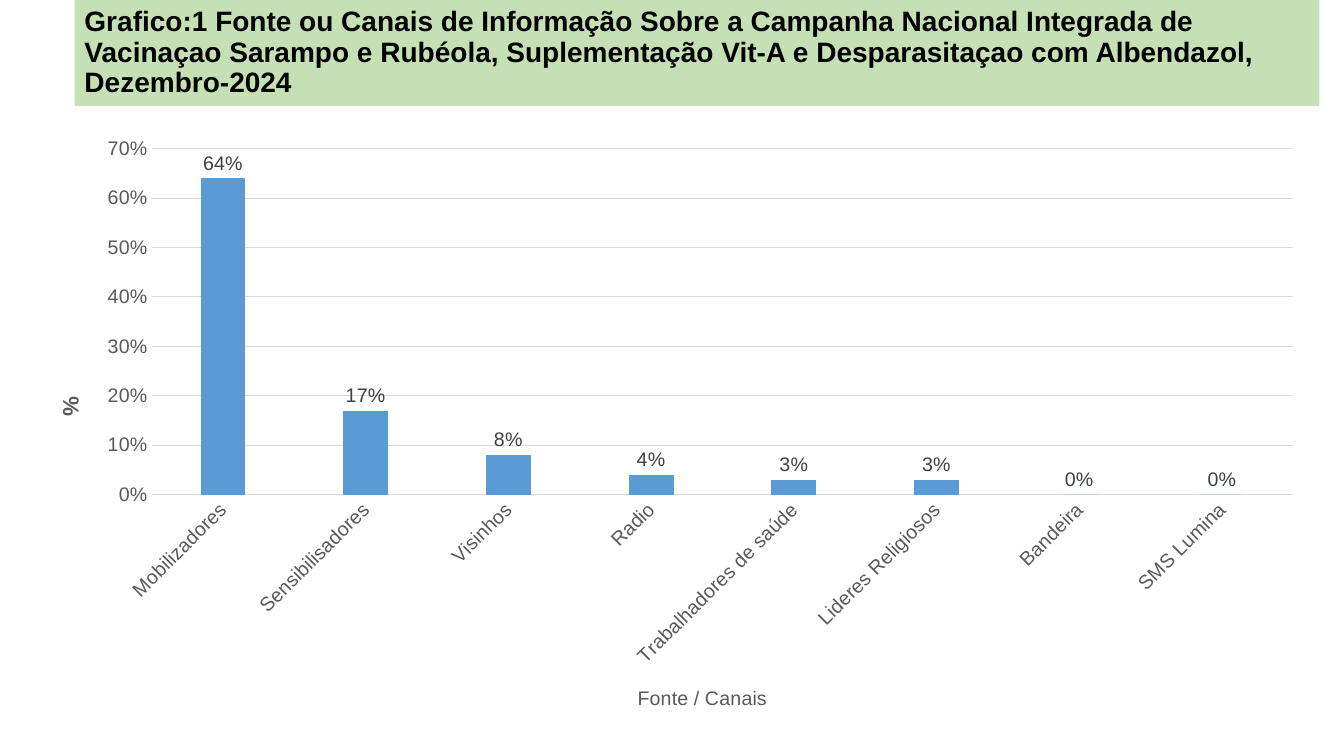
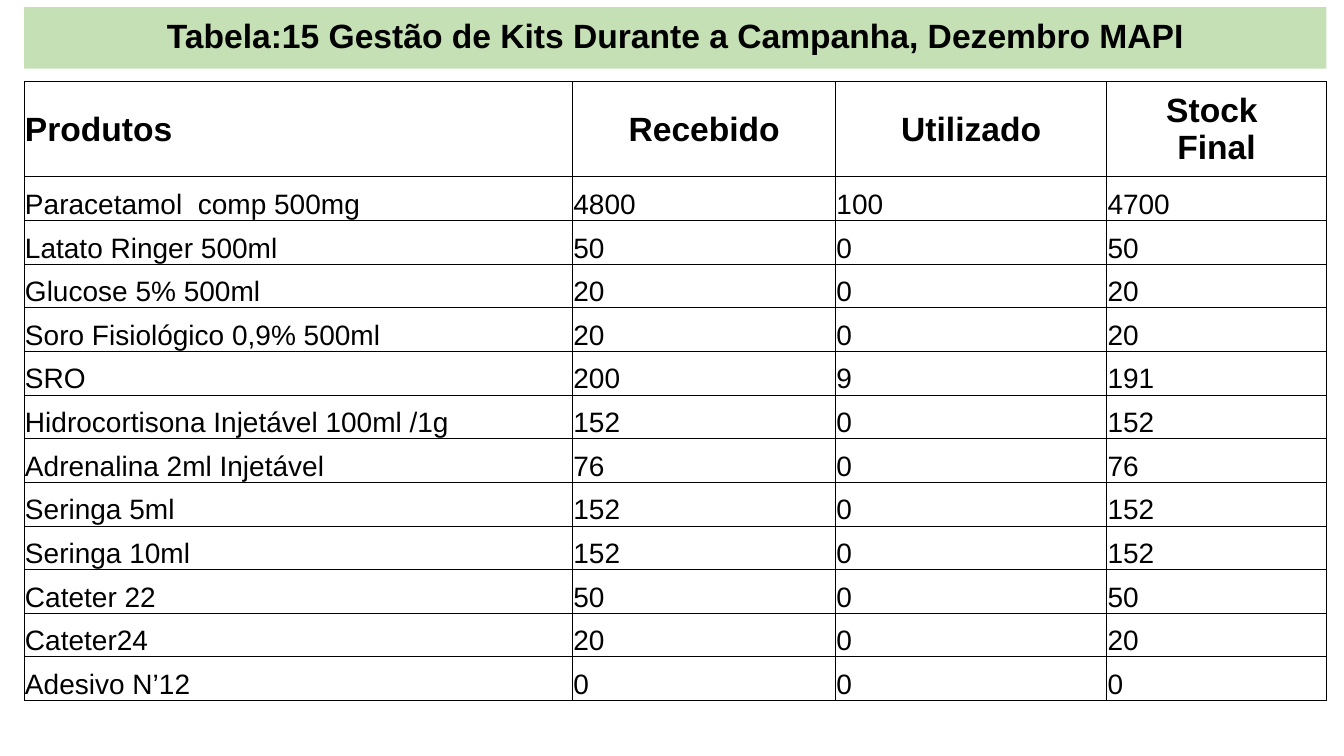
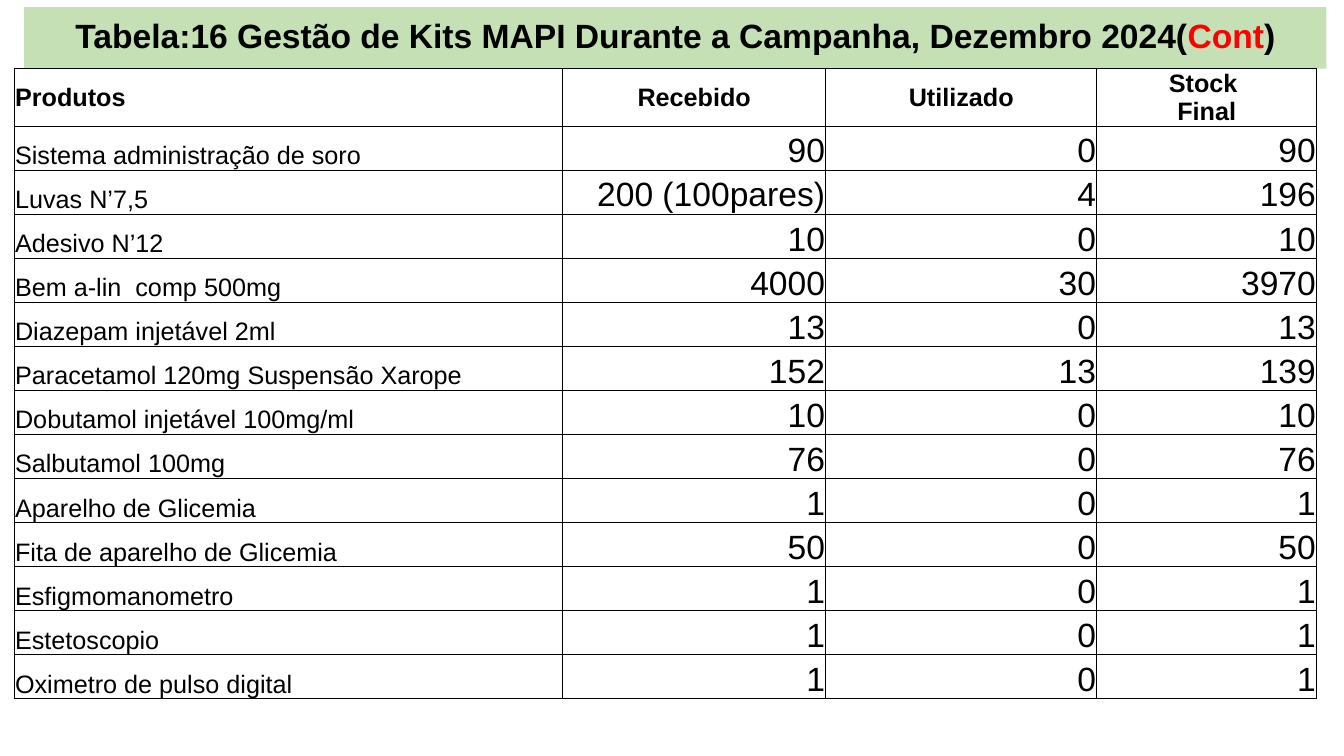
from lxml.etree import SubElement
from pptx import Presentation
from pptx.chart.data import CategoryChartData
from pptx.dml.color import RGBColor
from pptx.enum.chart import XL_CHART_TYPE, XL_LABEL_POSITION, XL_TICK_MARK
from pptx.enum.shapes import MSO_SHAPE
from pptx.enum.text import MSO_ANCHOR, PP_ALIGN
from pptx.oxml import parse_xml
from pptx.oxml.ns import nsdecls, qn
from pptx.util import Cm, Pt

COLORS = {
    "band": "C5E0B4", "text": "000000", "accent": "FF0000", "page": "FFFFFF",
    "bar": "5B9BD5", "grid": "D9D9D9", "axis": "595959", "label": "404040",
}
FONT = "Arial"
WIDE_BAND = (0.61, 0.18, 32.82, 1.55)
COLUMN_WIDTHS = (13.82, 6.63, 6.83, 5.54)
HEADERS = ("Produtos", "Recebido", "Utilizado", "Stock \nFinal")

CHANNELS = {
    "Mobilizadores": 0.64, "Sensibilisadores": 0.17, "Visinhos": 0.08,
    "Radio": 0.04, "Trabalhadores de saúde": 0.03, "Lideres Religiosos": 0.03,
    "Bandeira": 0, "SMS Lumina": 0,
}
KITS = [
    ("Paracetamol  comp 500mg", "4800", "100", "4700"),
    ("Latato Ringer 500ml", "50", "0", "50"),
    ("Glucose 5% 500ml", "20", "0", "20"),
    ("Soro Fisiológico 0,9% 500ml", "20", "0", "20"),
    ("SRO", "200", "9", "191"),
    ("Hidrocortisona Injetável 100ml /1g", "152", "0", "152"),
    ("Adrenalina 2ml Injetável", "76", "0", "76"),
    ("Seringa 5ml", "152", "0", "152"),
    ("Seringa 10ml", "152", "0", "152"),
    ("Cateter 22", "50", "0", "50"),
    ("Cateter24", "20", "0", "20"),
    ("Adesivo N’12", "0", "0", "0"),
]
KITS_CONT = [
    ("Sistema administração de soro", "90", "0", "90"),
    ("Luvas N’7,5", "200 (100pares)", "4", "196"),
    ("Adesivo N’12", "10", "0", "10"),
    ("Bem a-lin  comp 500mg", "4000", "30", "3970"),
    ("Diazepam injetável 2ml", "13", "0", "13"),
    ("Paracetamol 120mg Suspensão Xarope", "152", "13", "139"),
    ("Dobutamol injetável 100mg/ml", "10", "0", "10"),
    ("Salbutamol 100mg", "76", "0", "76"),
    ("Aparelho de Glicemia", "1", "0", "1"),
    ("Fita de aparelho de Glicemia", "50", "0", "50"),
    ("Esfigmomanometro", "1", "0", "1"),
    ("Estetoscopio", "1", "0", "1"),
    ("Oximetro de pulso digital", "1", "0", "1"),
]


def apply(target, **values):
    for name, value in values.items():
        setattr(target, name, value)


def rgb(name):
    return RGBColor.from_string(COLORS[name])


def fill_solid(target, color):
    target.fill.solid()
    target.fill.fore_color.rgb = rgb(color)


def style_font(font, size, color="text", bold=False):
    apply(font, name=FONT, size=Pt(size), bold=bold)
    font.color.rgb = rgb(color)


def add_run(p, text, size, color="text", bold=False):
    r = p.add_run()
    r.text = text
    style_font(r.font, size, color, bold)


def add_band(slide, box, runs, size, align):
    """Green title band; runs are (text, colour) pairs."""
    sp = slide.shapes.add_shape(MSO_SHAPE.RECTANGLE, *map(Cm, box))
    sp.shadow.inherit = False
    fill_solid(sp, "band")
    sp.line.fill.background()
    tf = sp.text_frame
    apply(tf, word_wrap=True, vertical_anchor=MSO_ANCHOR.MIDDLE)
    p = tf.paragraphs[0]
    apply(p, alignment=align, line_spacing=0.9)
    for text, color in runs:
        add_run(p, text, size, color, bold=True)


def set_layout(parent, index, **fractions):
    """Place a chart part by fractions of the chart area."""
    layout = parent.find(qn("c:layout"))
    if layout is None:
        layout = parse_xml(f"<c:layout {nsdecls('c')}/>")
        parent.insert(index, layout)
    manual = SubElement(layout, qn("c:manualLayout"))
    if "w" in fractions:
        SubElement(manual, qn("c:layoutTarget")).set("val", "inner")
    for mode in ("xMode", "yMode"):
        SubElement(manual, qn(f"c:{mode}")).set("val", "edge")
    for name, value in fractions.items():
        SubElement(manual, qn(f"c:{name}")).set("val", str(value))


def add_axis_title(axis, text, size, bold, rotation, x, y):
    title = axis.axis_title
    add_run(title.text_frame.paragraphs[0], text, size, "axis", bold)
    title.element.find(".//" + qn("a:bodyPr")).set("rot", str(rotation * 60000))
    set_layout(title.element, 1, x=x, y=y)


def add_channel_chart(slide, box):
    data = CategoryChartData(number_format="0%")
    data.categories = list(CHANNELS)
    data.add_series("Series 1", list(CHANNELS.values()))
    chart = slide.shapes.add_chart(
        XL_CHART_TYPE.COLUMN_CLUSTERED, *map(Cm, box), data).chart
    apply(chart, has_legend=False, has_title=False)
    style_font(chart.font, 14, "axis")

    # Columns and their labels
    plot = chart.plots[0]
    apply(plot, gap_width=219, overlap=-27, vary_by_categories=False,
          has_data_labels=True)
    fill_solid(plot.series[0].format, "bar")
    labels = plot.data_labels
    apply(labels, show_value=True, number_format="0%",
          number_format_is_linked=False, position=XL_LABEL_POSITION.OUTSIDE_END)
    style_font(labels.font, 14, "label")

    # Axes
    cat_axis, val_axis = chart.category_axis, chart.value_axis
    for axis in (cat_axis, val_axis):
        apply(axis, major_tick_mark=XL_TICK_MARK.NONE,
              minor_tick_mark=XL_TICK_MARK.NONE)
        style_font(axis.tick_labels.font, 14, "axis")
    apply(val_axis, minimum_scale=0, maximum_scale=0.7, major_unit=0.1,
          has_major_gridlines=True)
    apply(val_axis.tick_labels, number_format="0%",
          number_format_is_linked=False)
    val_axis.format.line.fill.background()
    for line in (cat_axis.format.line, val_axis.major_gridlines.format.line):
        line.color.rgb = rgb("grid")
        line.width = Pt(0.75)
    for body in chart.element.xpath(".//c:catAx/c:txPr/a:bodyPr"):
        body.set("rot", str(-45 * 60000))

    # Axis titles and plot area
    add_axis_title(cat_axis, "Fonte / Canais", 14, False, 0, 0.47, 0.92)
    add_axis_title(val_axis, "%", 16, True, -90, 0.02, 0.44)
    plot_area = chart.element.find(".//" + qn("c:plotArea"))
    set_layout(plot_area, 0, x=0.097, y=0.036, w=0.883, h=0.573)


def add_borders(cell):
    tc_pr = cell._tc.get_or_add_tcPr()
    for side in ("lnL", "lnR", "lnT", "lnB"):
        tc_pr.append(parse_xml(
            f'<a:{side} {nsdecls("a")} w="{Pt(0.5)}"><a:solidFill>'
            f'<a:srgbClr val="{COLORS["text"]}"/></a:solidFill></a:{side}>'))


def write_cell(cell, text, size, bold, align, anchor):
    add_borders(cell)
    fill_solid(cell, "page")
    apply(cell, margin_left=Cm(0.02), margin_right=Cm(0.02),
          margin_top=Cm(0.02), margin_bottom=0, vertical_anchor=anchor)
    tf = cell.text_frame
    for i, line in enumerate(text.split("\n")):
        p = tf.add_paragraph() if i else tf.paragraphs[0]
        p.alignment = align
        add_run(p, line, size, bold=bold)


def add_kit_table(slide, left, top, rows, header_height, row_height,
                  header_size, name_size, value_size, value_align):
    height = header_height + row_height * len(rows)
    table = slide.shapes.add_table(
        len(rows) + 1, len(HEADERS), Cm(left), Cm(top),
        Cm(sum(COLUMN_WIDTHS)), Cm(height)).table
    apply(table, first_row=False, horz_banding=False)
    for column, width in zip(table.columns, COLUMN_WIDTHS):
        column.width = Cm(width)
    for i, values in enumerate([HEADERS, *rows]):
        table.rows[i].height = Cm(row_height if i else header_height)
        for j, text in enumerate(values):
            if i == 0:
                size, align = header_size, PP_ALIGN.CENTER
            else:
                size, align = value_size, value_align
            if j == 0:
                size, align = (name_size if i else size), PP_ALIGN.LEFT
            anchor = MSO_ANCHOR.BOTTOM if i else MSO_ANCHOR.MIDDLE
            write_cell(table.cell(i, j), text, size, i == 0, align, anchor)


def main():
    prs = Presentation()
    apply(prs, slide_width=Cm(33.87), slide_height=Cm(19.05))
    chart_slide, kit_slide, cont_slide = (
        prs.slides.add_slide(prs.slide_layouts[6]) for _ in range(3))

    # Information channels
    add_band(chart_slide, (1.88, 0, 31.37, 2.67), [(
        "Grafico:1 Fonte ou Canais de Informação Sobre a Campanha Nacional "
        "Integrada de Vacinaçao Sarampo e Rubéola, Suplementação Vit-A e "
        "Desparasitaçao com Albendazol, Dezembro-2024", "text")],
        20, PP_ALIGN.LEFT)
    add_channel_chart(chart_slide, (0.66, 3.2, 32.59, 15.21))

    # Kit management
    add_band(kit_slide, WIDE_BAND, [(
        "Tabela:15 Gestão de Kits Durante a Campanha, Dezembro MAPI", "text")],
        24, PP_ALIGN.CENTER)
    add_kit_table(kit_slide, 0.61, 2.06, KITS, 2.39, 1.1,
                  header_size=24, name_size=20, value_size=20,
                  value_align=PP_ALIGN.LEFT)

    # Kit management, continued
    add_band(cont_slide, WIDE_BAND, [
        ("Tabela:16 Gestão de Kits MAPI Durante a Campanha, Dezembro 2024(",
         "text"), ("Cont", "accent"), (")", "text")], 24, PP_ALIGN.CENTER)
    add_kit_table(cont_slide, 0.36, 1.73, KITS_CONT, 1.44, 1.11,
                  header_size=18, name_size=18, value_size=24,
                  value_align=PP_ALIGN.RIGHT)

    prs.save("out.pptx")


if __name__ == "__main__":
    main()
